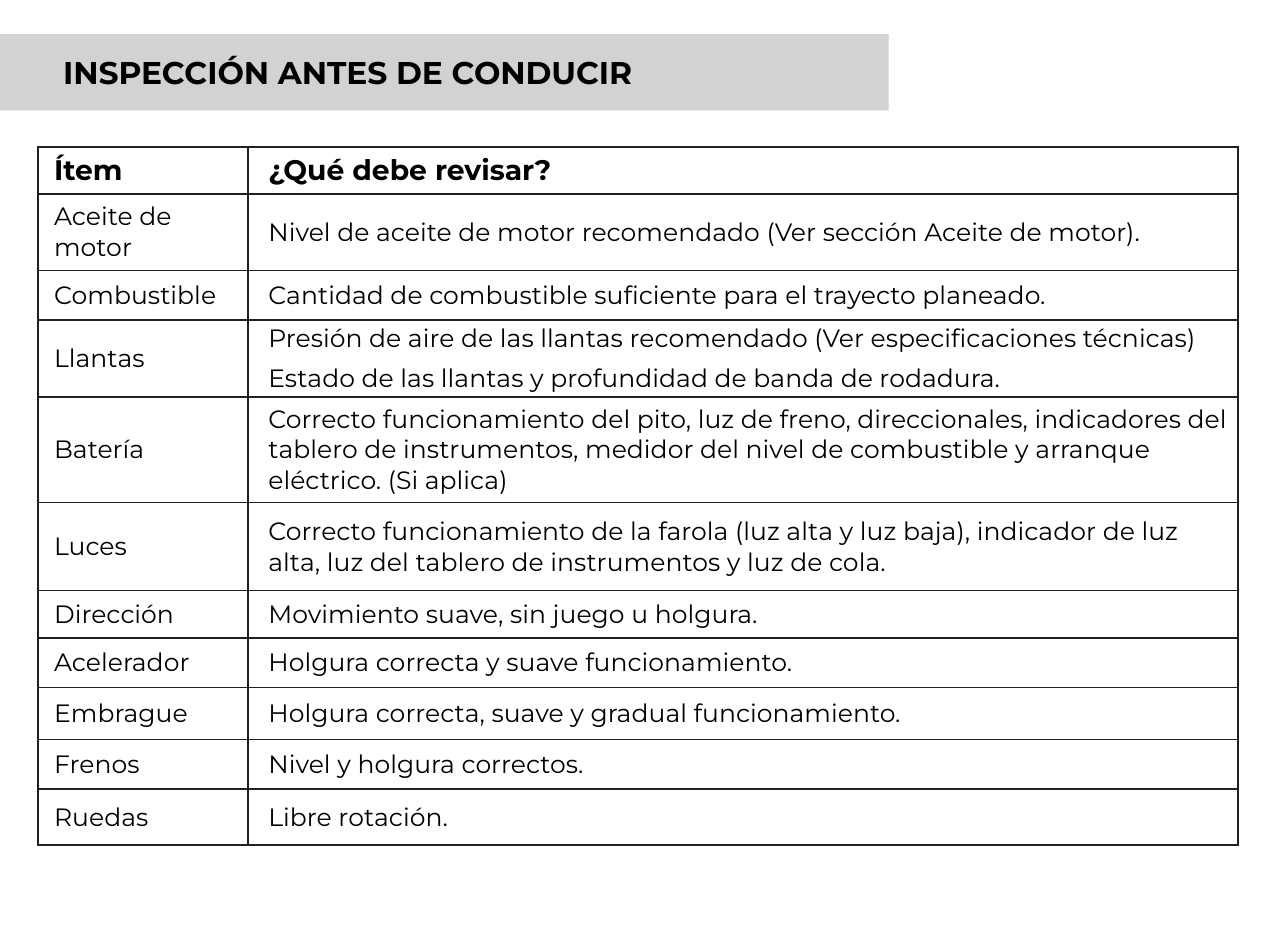
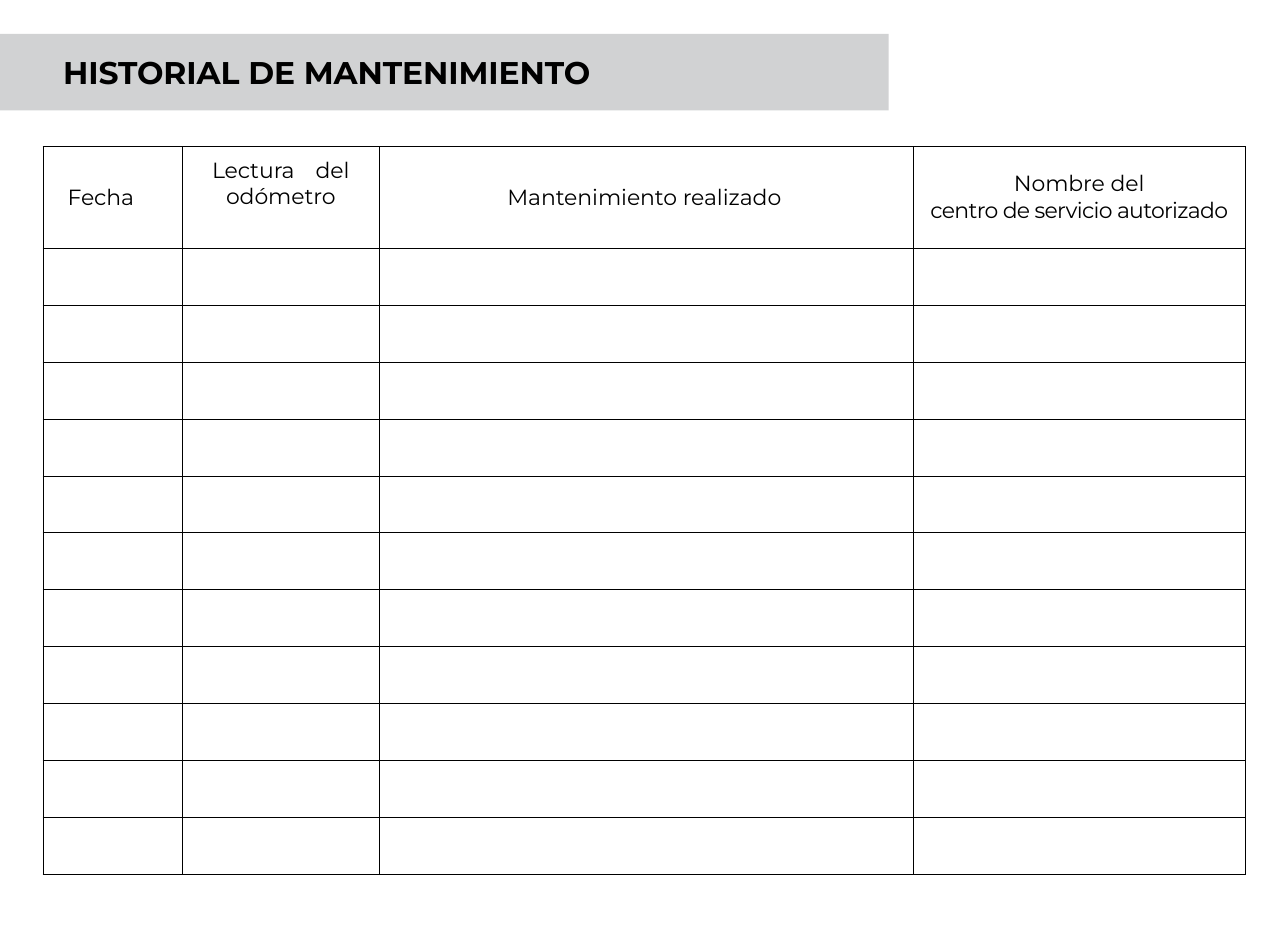
import pptx
import pptx.dml.color
import pptx.enum.shapes
import pptx.enum.text
import pptx.oxml
import pptx.oxml.ns
import pptx.util

Inches = pptx.util.Inches
Pt = pptx.util.Pt
RGBColor = pptx.dml.color.RGBColor
ALIGN = pptx.enum.text.PP_ALIGN
MIDDLE = pptx.enum.text.MSO_ANCHOR.MIDDLE

BLACK = RGBColor(0x00, 0x00, 0x00)
INK = RGBColor(0x22, 0x1F, 0x1F)
BAND_GREY = RGBColor(0xD1, 0xD2, 0xD3)
FONT = "Montserrat"
SLIDE_SIZE = (5.71, 4.14)
BAND = (0, 0.15, 3.94, 0.34)
TITLE_LEFT = 0.28

INSPECTION_TITLE = "INSPECCIÓN ANTES DE CONDUCIR"
INSPECTION_COLUMNS = (0.93, 4.39)
INSPECTION_INDENTS = (0.07, 0.09)
INSPECTION = [
    (0.21, "Ítem", ["¿Qué debe revisar?"]),
    (0.34, "Aceite de motor",
     ["Nivel de aceite de motor recomendado (Ver sección Aceite de motor)."]),
    (0.22, "Combustible",
     ["Cantidad de combustible suficiente para el trayecto planeado."]),
    (0.34, "Llantas",
     ["Presión de aire de las llantas recomendado (Ver especificaciones técnicas)",
      "Estado de las llantas y profundidad de banda de rodadura."]),
    (0.47, "Batería",
     ["Correcto funcionamiento del pito, luz de freno, direccionales, indicadores del "
      "tablero de instrumentos, medidor del nivel de combustible y arranque "
      "eléctrico. (Si aplica)"]),
    (0.39, "Luces",
     ["Correcto funcionamiento de la farola (luz alta y luz baja), indicador de luz "
      "alta, luz del tablero de instrumentos y luz de cola."]),
    (0.21, "Dirección", ["Movimiento suave, sin juego u holgura."]),
    (0.22, "Acelerador", ["Holgura correcta y suave funcionamiento."]),
    (0.23, "Embrague", ["Holgura correcta, suave y gradual funcionamiento."]),
    (0.22, "Frenos", ["Nivel y holgura correctos."]),
    (0.25, "Ruedas", ["Libre rotación."]),
]

HISTORY_TITLE = "HISTORIAL DE MANTENIMIENTO"
HISTORY_HEADINGS = [
    dict(width=0.62, lines=["Fecha"], indent=0.11),
    dict(width=0.87, lines=[[("Lectura", 0), (" ", 5), ("del", 0)], "odómetro"],
         align=ALIGN.CENTER, bottom=0.12),
    dict(width=2.37, lines=["Mantenimiento realizado"], indent=0.57),
    dict(width=1.47, lines=["Nombre del", [("centro de servicio autorizado", -0.2)]],
         align=ALIGN.CENTER),
]
HISTORY_HEIGHT = 3.23
HISTORY_HEADER = 0.45
HISTORY_BLANK_ROWS = 11


def write_text(frame, lines, size=8, bold=False, align=ALIGN.LEFT, gap=0):
    for index, line in enumerate(lines):
        para = frame.paragraphs[0] if index == 0 else frame.add_paragraph()
        para.alignment = align
        para.space_before = Pt(gap if index else 0)
        for text, spacing in [(line, 0)] if isinstance(line, str) else line:
            span = para.add_run()
            span.text = text
            span.font.name = FONT
            span.font.size = Pt(size)
            span.font.bold = bold
            span.font.color.rgb = BLACK
            if spacing:
                span.font._element.set("spc", str(round(spacing * 100)))


def draw_borders(cell, color, weights):
    properties = cell._tc.get_or_add_tcPr()
    namespace = pptx.oxml.ns.nsdecls("a")
    for index, (side, weight) in enumerate(zip("LRTB", weights)):
        properties.insert(index, pptx.oxml.parse_xml(
            f'<a:ln{side} {namespace} w="{int(Pt(weight))}"><a:solidFill>'
            f'<a:srgbClr val="{color}"/></a:solidFill></a:ln{side}>'))


def add_grid(page, left, top, widths, heights, color, side_weight, line_weights):
    table = page.shapes.add_table(
        len(heights), len(widths), Inches(left), Inches(top),
        Inches(sum(widths)), Inches(sum(heights))).table
    table.first_row = table.horz_banding = False
    for column, width in zip(table.columns, widths):
        column.width = Inches(width)
    for index, (row, height) in enumerate(zip(table.rows, heights)):
        row.height = Inches(height)
        for cell in row.cells:
            cell.fill.background()
            cell.margin_left = cell.margin_right = 0
            cell.margin_top = cell.margin_bottom = 0
            cell.vertical_anchor = MIDDLE
            draw_borders(cell, color, (side_weight, side_weight, *line_weights[index:index + 2]))
    return table


def add_page(deck, layout, title):
    page = deck.slides.add_slide(layout)
    frame = page.shapes.title.text_frame
    frame.margin_left = frame.margin_right = frame.margin_top = frame.margin_bottom = 0
    frame.vertical_anchor = MIDDLE
    frame.auto_size = pptx.enum.text.MSO_AUTO_SIZE.NONE
    write_text(frame, [title], size=10, bold=True)
    return page


def style_layout(layout, page):
    left, top, width, height = map(Inches, BAND)
    band = page.shapes.add_shape(
        pptx.enum.shapes.MSO_SHAPE.RECTANGLE, left, top, width, height)
    band.shadow.inherit = False
    band.fill.solid()
    band.fill.fore_color.rgb = BAND_GREY
    band.line.fill.background()
    layout.shapes.element.insert(2, band.element)
    title = layout.placeholders[0]
    title.left, title.top = Inches(TITLE_LEFT), top
    title.width, title.height = width - Inches(TITLE_LEFT), height


def fill_inspection(page):
    count = len(INSPECTION)
    weights = [0.75 if line in (0, 1, count) else 0.5 for line in range(count + 1)]
    table = add_grid(page, 0.17, 0.65, INSPECTION_COLUMNS,
                     [row[0] for row in INSPECTION], INK, 0.75, weights)
    for index, (height, item, checks) in enumerate(INSPECTION):
        header = index == 0
        for column, lines in enumerate(([item], checks)):
            cell = table.cell(index, column)
            cell.margin_left = Inches(INSPECTION_INDENTS[column])
            write_text(cell.text_frame, lines, size=9 if header else 8, bold=header, gap=3.2)


def fill_history(page):
    blank_height = (HISTORY_HEIGHT - HISTORY_HEADER) / HISTORY_BLANK_ROWS
    heights = [HISTORY_HEADER] + [blank_height] * HISTORY_BLANK_ROWS
    table = add_grid(page, 0.19, 0.65, [heading["width"] for heading in HISTORY_HEADINGS],
                     heights, BLACK, 0.25, [0.25] * (len(heights) + 1))
    for column, heading in enumerate(HISTORY_HEADINGS):
        cell = table.cell(0, column)
        cell.margin_left = Inches(heading.get("indent", 0))
        cell.margin_bottom = Inches(heading.get("bottom", 0))
        write_text(cell.text_frame, heading["lines"], size=7,
                   align=heading.get("align", ALIGN.LEFT))
        for row in range(1, len(heights)):
            para = table.cell(row, column).text_frame.paragraphs[0]
            para._p.append(pptx.oxml.parse_xml(
                f'<a:endParaRPr {pptx.oxml.ns.nsdecls("a")} sz="700"/>'))


def main():
    deck = pptx.Presentation()
    deck.slide_width, deck.slide_height = map(Inches, SLIDE_SIZE)
    layout = deck.slide_layouts[5]
    inspection = add_page(deck, layout, INSPECTION_TITLE)
    style_layout(layout, inspection)
    fill_inspection(inspection)
    fill_history(add_page(deck, layout, HISTORY_TITLE))
    deck.save("out.pptx")


if __name__ == "__main__":
    main()
